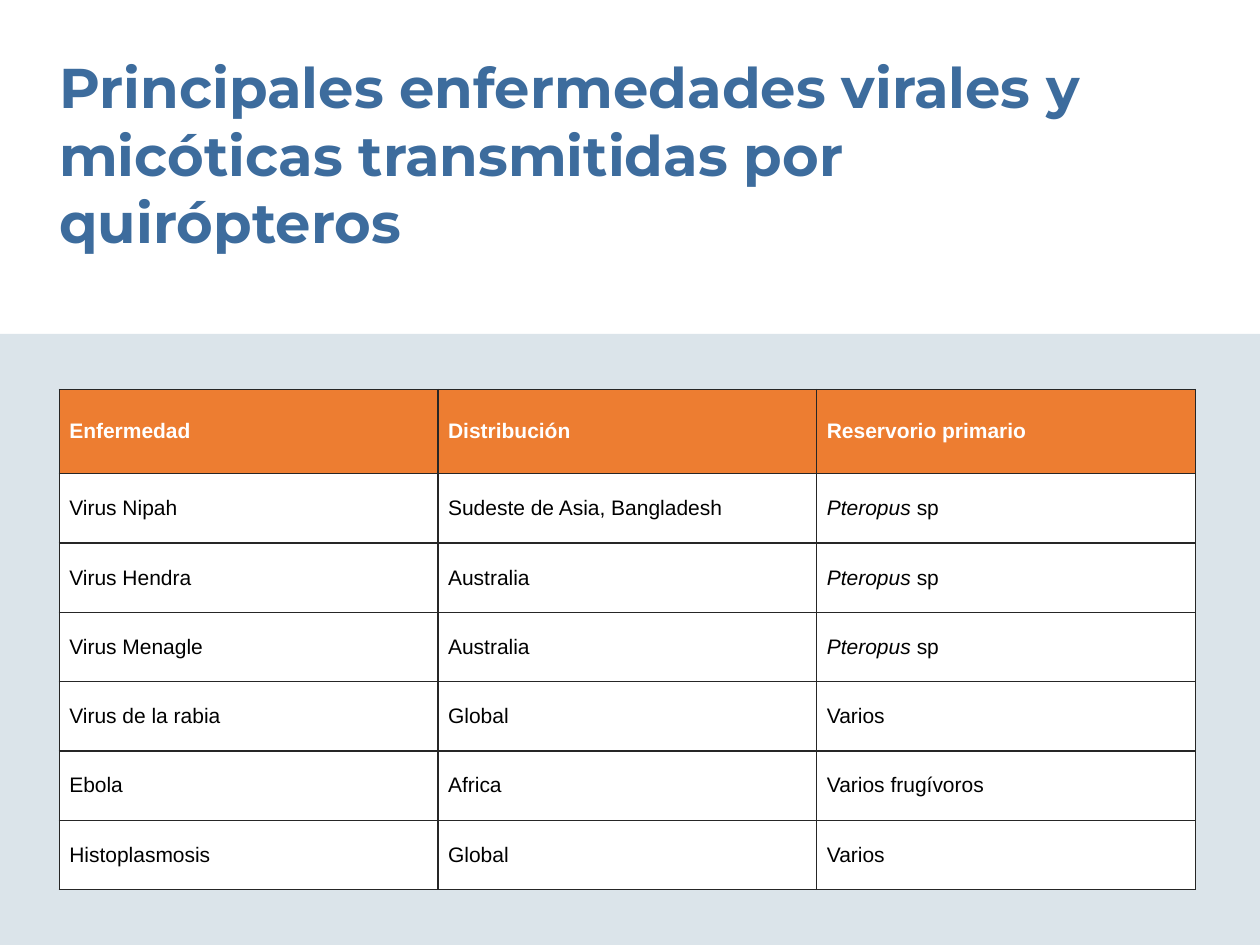
from dataclasses import dataclass

from lxml.etree import SubElement
from pptx import Presentation
from pptx.dml.color import RGBColor
from pptx.enum.shapes import MSO_SHAPE
from pptx.enum.text import MSO_ANCHOR, MSO_AUTO_SIZE, PP_ALIGN
from pptx.oxml.ns import qn
from pptx.util import Inches, Pt

TITLE = "Principales enfermedades virales y micóticas transmitidas por quirópteros"
PTEROPUS = (("Pteropus ", True), ("sp", False))
ROWS = [
    ("Enfermedad", "Distribución", "Reservorio primario"),
    ("Virus Nipah", "Sudeste de Asia, Bangladesh", PTEROPUS),
    ("Virus Hendra", "Australia", PTEROPUS),
    ("Virus Menagle", "Australia", PTEROPUS),
    ("Virus de la rabia", "Global", "Varios"),
    ("Ebola", "Africa", "Varios frugívoros"),
    ("Histoplasmosis", "Global", "Varios"),
]


@dataclass(frozen=True)
class Theme:
    title_font: str = "Montserrat"
    body_font: str = "Arial"
    title_size: int = 32
    body_size: int = 12
    title: str = "3D6C9D"
    panel: str = "DBE4EA"
    header: str = "ED7D31"
    white: str = "FFFFFF"
    black: str = "000000"
    border: str = "262626"
    border_width: float = 0.75


THEME = Theme()
LEFT = 0.47
PANEL_TOP = 2.65
TABLE_TOP, TABLE_WIDTH = 3.09, 9.02
HEADER_HEIGHT, ROW_HEIGHT = 0.67, 0.55


def rgb(value):
    return RGBColor.from_string(value)


def set_fill(obj, color):
    obj.fill.solid()
    obj.fill.fore_color.rgb = rgb(color)


def write(tf, text, font=THEME.body_font, size=THEME.body_size, color=THEME.black, bold=False):
    p = tf.paragraphs[0]
    p.alignment = PP_ALIGN.LEFT
    for part, italic in ((text, False),) if isinstance(text, str) else text:
        r = p.add_run()
        r.text = part
        r.font.name, r.font.size = font, Pt(size)
        r.font.bold, r.font.italic = bold, italic
        r.font.color.rgb = rgb(color)


def set_borders(cell):
    tc_pr = cell._tc.get_or_add_tcPr()
    for i, side in enumerate(("a:lnL", "a:lnR", "a:lnT", "a:lnB")):
        ln = tc_pr.makeelement(qn(side), {"w": str(Pt(THEME.border_width))})
        fill = SubElement(ln, qn("a:solidFill"))
        SubElement(fill, qn("a:srgbClr"), val=THEME.border)
        tc_pr.insert(i, ln)


def add_panel(slide, prs):
    top = Inches(PANEL_TOP)
    s = slide.shapes.add_shape(
        MSO_SHAPE.RECTANGLE, 0, top, prs.slide_width, prs.slide_height - top)
    s.shadow.inherit = False
    set_fill(s, THEME.panel)
    s.line.fill.background()


def add_title(slide):
    s = slide.shapes.title
    s.left, s.top, s.width, s.height = map(Inches, (LEFT, 0.42, 8.2, 1.62))
    tf = s.text_frame
    tf.margin_left = tf.margin_top = tf.margin_right = tf.margin_bottom = 0
    tf.word_wrap = True
    tf.auto_size = MSO_AUTO_SIZE.SHAPE_TO_FIT_TEXT
    tf.vertical_anchor = MSO_ANCHOR.TOP
    write(tf, TITLE, font=THEME.title_font, size=THEME.title_size,
          color=THEME.title, bold=True)


def add_disease_table(slide):
    columns = len(ROWS[0])
    height = HEADER_HEIGHT + ROW_HEIGHT * (len(ROWS) - 1)
    table = slide.shapes.add_table(
        len(ROWS), columns, Inches(LEFT), Inches(TABLE_TOP),
        Inches(TABLE_WIDTH), Inches(height)).table
    for column in table.columns:
        column.width = Inches(TABLE_WIDTH / columns)
    for i, row in enumerate(ROWS):
        header = i == 0
        table.rows[i].height = Inches(HEADER_HEIGHT if header else ROW_HEIGHT)
        for j, text in enumerate(row):
            cell = table.cell(i, j)
            cell.margin_left = cell.margin_right = Inches(0.08)
            cell.margin_top = cell.margin_bottom = Inches(0.05)
            cell.vertical_anchor = MSO_ANCHOR.MIDDLE
            set_fill(cell, THEME.header if header else THEME.white)
            set_borders(cell)
            write(cell.text_frame, text, bold=header,
                  color=THEME.white if header else THEME.black)


def main():
    prs = Presentation()
    prs.slide_width, prs.slide_height = Inches(10), Inches(7.5)
    slide = prs.slides.add_slide(prs.slide_layouts[5])
    add_panel(slide, prs)
    add_title(slide)
    add_disease_table(slide)
    prs.save("out.pptx")


if __name__ == "__main__":
    main()
